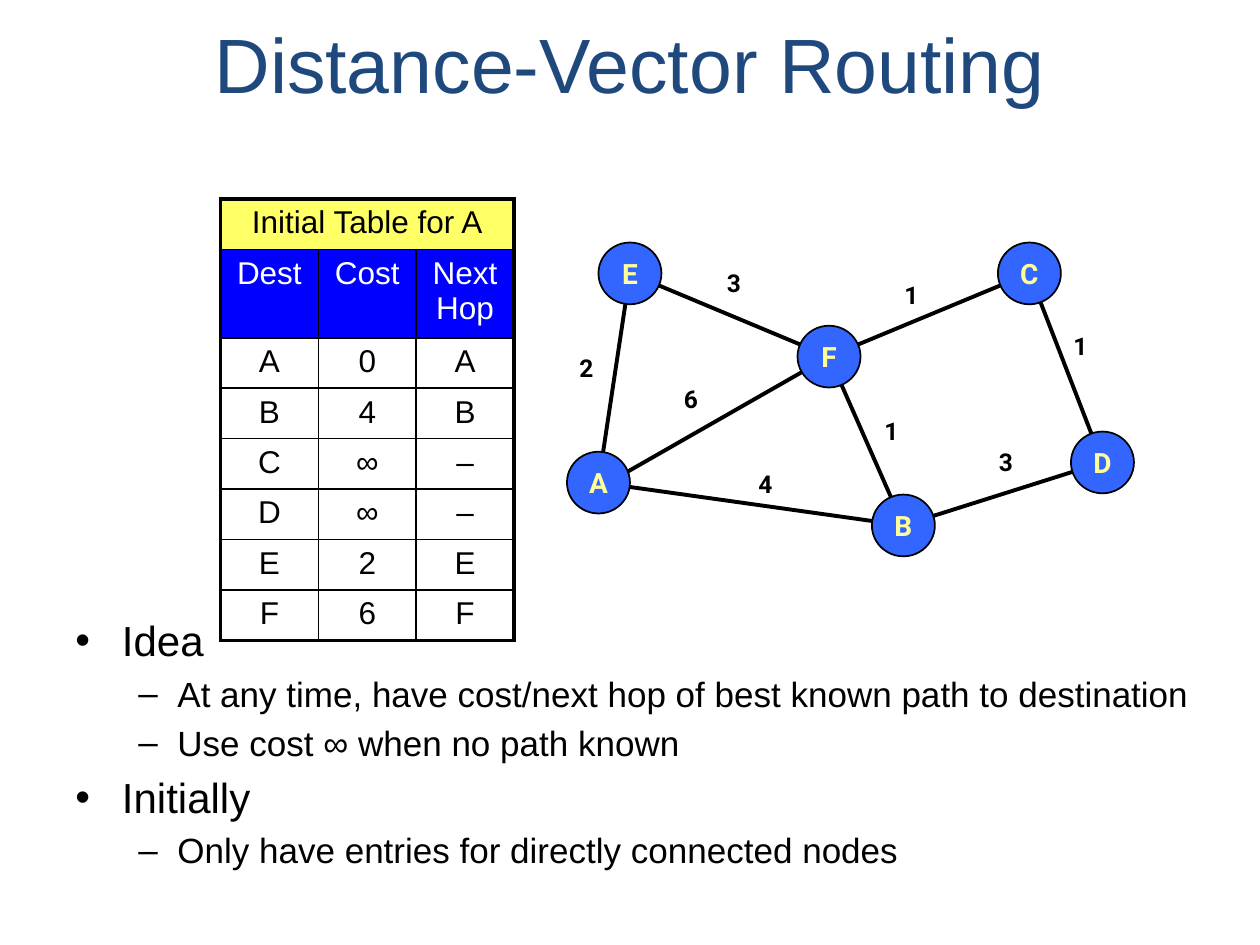
from lxml.etree import SubElement
from pptx import Presentation
from pptx.dml.color import RGBColor
from pptx.enum.shapes import MSO_CONNECTOR, MSO_SHAPE
from pptx.enum.text import MSO_ANCHOR, PP_ALIGN
from pptx.oxml.ns import qn
from pptx.util import Inches, Pt

COLORS = {"title": "1F497D", "black": "000000", "white": "FFFFFF", "node": "3366FF",
          "node_text": "FFFF99", "caption": "FFFF66", "header": "0000FF"}
NODE_W, NODE_H = 0.5, 0.49
NODES = {"A": (4.75, 3.83), "E": (5, 2.17), "F": (6.58, 2.83),
         "C": (8.17, 2.17), "D": (8.75, 3.67), "B": (7.17, 4.17)}
# start node, end node, cost, left and top of the cost label
EDGES = [("E", "A", "2", 4.5, 2.75), ("F", "E", "3", 5.67, 2.08),
         ("F", "C", "1", 7.08, 2.17), ("C", "D", "1", 8.42, 2.58),
         ("B", "D", "3", 7.83, 3.5), ("B", "F", "1", 6.92, 3.25),
         ("A", "F", "6", 5.33, 3), ("A", "B", "4", 5.92, 3.67)]
EDGE_START_SHIFT = {("A", "F"): 0.08}
ROUTES = [("Initial Table for A", "", ""), ("Dest", "Cost", "Next Hop"),
          ("A", "0", "A"), ("B", "4", "B"), ("C", "∞", "–"),
          ("D", "∞", "–"), ("E", "2", "E"), ("F", "6", "F")]
BULLETS = [(0, "Idea"),
           (1, "At any time, have cost/next hop of best known path to destination"),
           (1, "Use cost ∞ when no path known"),
           (0, "Initially"),
           (1, "Only have entries for directly connected nodes")]
# size, bullet, left margin, hanging indent
LEVELS = [(24, "•", 0.37, 0.37), (20, "–", 0.81, 0.31)]


def rgb(name):
    return RGBColor.from_string(COLORS[name])


def add_run(p, text, size, color="black", font="Arial", bold=False):
    r = p.add_run()
    r.text = text
    r.font.size, r.font.name, r.font.bold = Pt(size), font, bold
    r.font.color.rgb = rgb(color)


def add_text_frame(slide, left, top, width, height, wrap=True):
    sp = slide.shapes.add_textbox(Inches(left), Inches(top), Inches(width), Inches(height))
    sp.text_frame.word_wrap = wrap
    return sp.text_frame


def add_title(slide, text):
    tf = add_text_frame(slide, 0.5, 0, 9, 1)
    tf.vertical_anchor = MSO_ANCHOR.MIDDLE
    p = tf.paragraphs[0]
    p.alignment = PP_ALIGN.CENTER
    add_run(p, text, 44, "title")


def add_bullets(slide):
    tf = add_text_frame(slide, 0.5, 4.83, 9.27, 2.45)
    for i, (level, text) in enumerate(BULLETS):
        size, bullet, margin, hanging = LEVELS[level]
        p = tf.add_paragraph() if i else tf.paragraphs[0]
        p.level = level
        pPr = p._p.get_or_add_pPr()
        pPr.set("marL", str(Inches(margin)))
        pPr.set("indent", str(-Inches(hanging)))
        SubElement(SubElement(pPr, qn("a:spcBef")), qn("a:spcPct"), val="20000")
        SubElement(pPr, qn("a:buFont"), typeface="Arial")
        SubElement(pPr, qn("a:buChar"), char=bullet)
        add_run(p, text, size)


def add_edge(slide, start, end):
    (x1, y1), (x2, y2) = NODES[start], NODES[end]
    x1 += EDGE_START_SHIFT.get((start, end), 0)
    line = slide.shapes.add_connector(
        MSO_CONNECTOR.STRAIGHT, Inches(x1), Inches(y1), Inches(x2), Inches(y2))
    line.line.color.rgb = rgb("black")
    line.line.width = Pt(2.25)
    SubElement(line._element.spPr, qn("a:effectLst"))


def add_node(slide, name):
    x, y = NODES[name]
    sp = slide.shapes.add_shape(
        MSO_SHAPE.OVAL, Inches(x - NODE_W / 2), Inches(y - NODE_H / 2),
        Inches(NODE_W), Inches(NODE_H))
    sp.shadow.inherit = False
    sp.fill.solid()
    sp.fill.fore_color.rgb = rgb("node")
    sp.line.color.rgb = rgb("black")
    sp.line.width = Pt(1)
    tf = sp.text_frame
    tf.vertical_anchor = MSO_ANCHOR.MIDDLE
    p = tf.paragraphs[0]
    p.alignment = PP_ALIGN.CENTER
    add_run(p, name, 16, "node_text", "Roboto", True)


def add_cost(slide, cost, left, top):
    tf = add_text_frame(slide, left, top, 0.31, 0.33, wrap=False)
    add_run(tf.paragraphs[0], cost, 14, font="Roboto", bold=True)


def set_borders(cell, outer):
    """Draw all four borders, thick on the sides named in outer."""
    tcPr = cell._tc.get_or_add_tcPr()
    for side in "LRTB":
        width = Pt(2.25 if side in outer else 1)
        ln = SubElement(tcPr, qn(f"a:ln{side}"), w=str(width))
        fill = SubElement(ln, qn("a:solidFill"))
        SubElement(fill, qn("a:srgbClr"), val=COLORS["black"])


def add_routing_table(slide):
    n_rows, n_cols = len(ROUTES), len(ROUTES[0])
    table = slide.shapes.add_table(
        n_rows, n_cols, Inches(1.75), Inches(1.58), Inches(2.33), Inches(3.5)).table
    table.first_row = table.horz_banding = False
    for i, row in enumerate(ROUTES):
        table.rows[i].height = Inches(0.7 if i == 1 else 0.4)
        for j, text in enumerate(row):
            cell = table.cell(i, j)
            sides = {"L": j == 0, "R": j == n_cols - 1 or i == 0,
                     "T": i == 0, "B": i == n_rows - 1}
            set_borders(cell, [side for side, is_outer in sides.items() if is_outer])
            if i < 2:
                cell.fill.solid()
                cell.fill.fore_color.rgb = rgb(("caption", "header")[i])
            else:
                cell.fill.background()
            if text:
                p = cell.text_frame.paragraphs[0]
                p.alignment = PP_ALIGN.CENTER
                add_run(p, text, 18, "white" if i == 1 else "black")
    table.cell(0, 0).merge(table.cell(0, n_cols - 1))


def main():
    prs = Presentation()
    prs.slide_width, prs.slide_height = Inches(10), Inches(7.5)
    slide = prs.slides.add_slide(prs.slide_layouts[6])
    add_title(slide, "Distance-Vector Routing")
    add_bullets(slide)
    for start, end, *_ in EDGES:
        add_edge(slide, start, end)
    for name in NODES:
        add_node(slide, name)
    for _, _, cost, left, top in EDGES:
        add_cost(slide, cost, left, top)
    add_routing_table(slide)
    prs.save("out.pptx")


if __name__ == "__main__":
    main()
